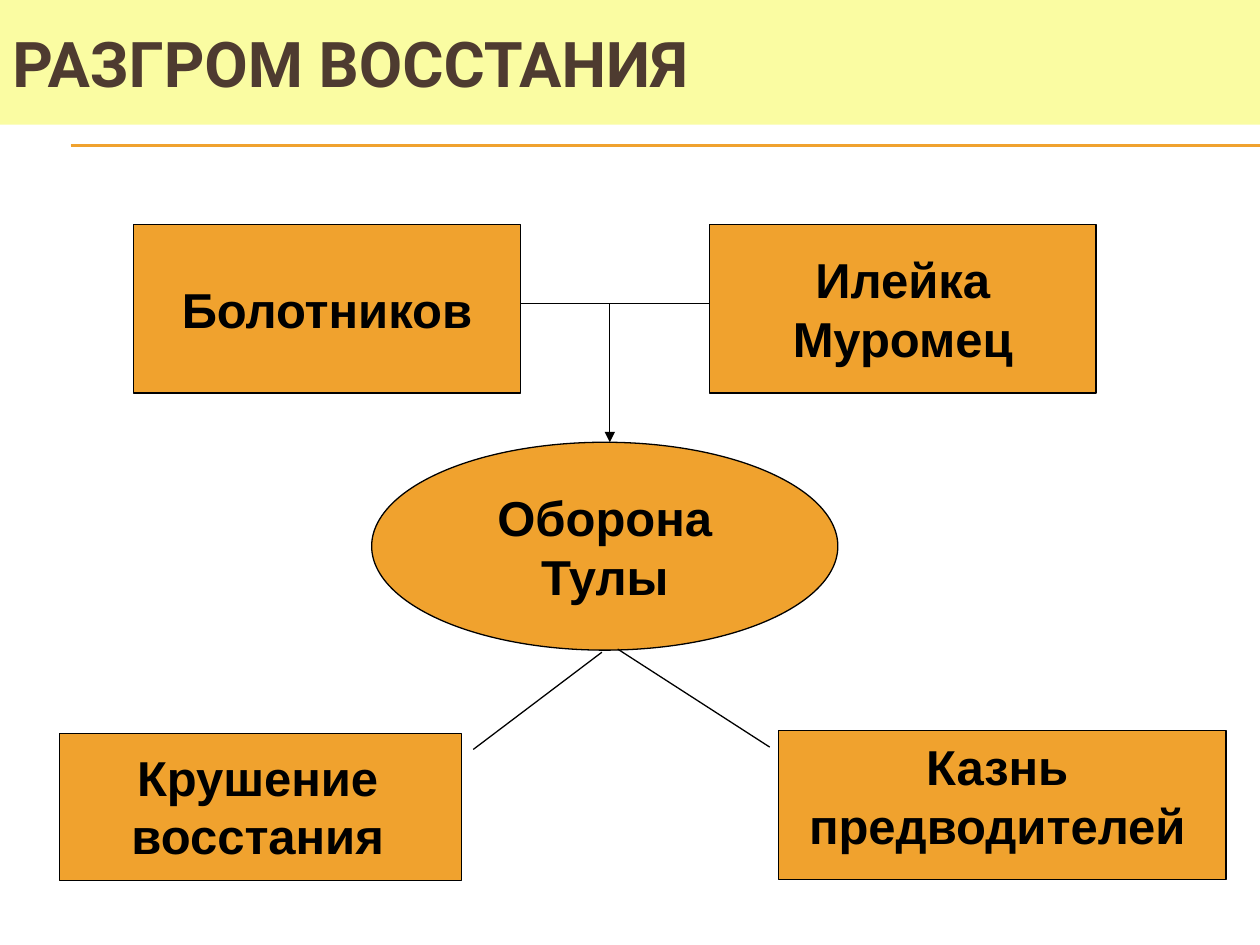
from collections import namedtuple

from lxml import etree
from pptx import Presentation
from pptx import util as u
from pptx.dml.color import RGBColor
from pptx.enum import shapes, text
from pptx.oxml.ns import qn

COLOURS = {"banner": "FAFCA2", "title": "4E3B30", "accent": "F0A22E", "ink": "000000"}
KINDS = shapes.MSO_SHAPE

Box = namedtuple("Box", "left top width height")


def colour(name):
    return RGBColor.from_string(COLOURS[name])


def inside(box, left, top, width, height):
    """Place a part relative to the top left corner of its region."""
    return Box(box.left + left, box.top + top, width, height)


def inches(box):
    return [u.Inches(length) for length in box]


def write(shape, words, size, font, ink, align, wrap):
    frame = shape.text_frame
    frame.word_wrap = wrap
    frame.text = words
    for para in frame.paragraphs:
        para.alignment = align
        para.font.size = u.Pt(size)
        para.font.name = font
        para.font.bold = True
        para.font.color.rgb = colour(ink)


def label(shape, words, wrap=False):
    write(shape, words, 28, "Arial", "ink", text.PP_ALIGN.CENTER, wrap)


def add_block(page, kind, box, fill="accent", outline="ink"):
    shape = page.shapes.add_shape(kind, *inches(box))
    shape.shadow.inherit = False
    shape.fill.solid()
    shape.fill.fore_color.rgb = colour(fill)
    if outline:
        shape.line.color.rgb = colour(outline)
        shape.line.width = u.Pt(0.75)
    else:
        shape.line.fill.background()
    shape.text_frame.vertical_anchor = text.MSO_ANCHOR.MIDDLE
    return shape


def add_line(page, box, ink="ink", arrow=False):
    left, top, width, height = inches(box)
    line = page.shapes.add_connector(
        shapes.MSO_CONNECTOR.STRAIGHT, left, top, left + width, top + height)
    line.line.color.rgb = colour(ink)
    line.line.width = u.Pt(0.75)
    if arrow:
        etree.SubElement(line.line._get_or_add_ln(), qn("a:tailEnd"), type="triangle")
    etree.SubElement(line._element.spPr, qn("a:effectLst"))


def add_header(page, box):
    for top in (1.15, 1.16):
        add_line(page, inside(box, 0.56, top, box.width - 0.56, 0), "accent")
    banner = add_block(page, KINDS.RECTANGLE, inside(box, 0, 0, box.width, 0.99),
                       "banner", None)
    write(banner, "РАЗГРОМ ВОССТАНИЯ", 36, "Roboto", "title", text.PP_ALIGN.LEFT, True)


def add_battle(page, box):
    """Two leaders, joined by a line that points down to the siege."""
    block_width, block_height, link_top = 3.07, 1.34, 0.63
    second_left = 4.57
    for left, name in ((0, "Болотников"), (second_left, "Илейка\nМуромец")):
        label(add_block(page, KINDS.RECTANGLE,
                        inside(box, left, 0, block_width, block_height)), name)
    siege = inside(box, 1.89, 1.73, 3.7, 1.65)
    add_line(page, inside(box, block_width, link_top, second_left - block_width, 0))
    add_line(page, inside(box, 3.78, link_top, 0, 1.73 - link_top), arrow=True)
    label(add_block(page, KINDS.OVAL, siege), "Оборона\vТулы")


def add_outcome(page, box, leader, words, words_box):
    """A callout whose leader runs up to the siege, with its caption."""
    callout = add_block(page, KINDS.LINE_CALLOUT_1, box)
    for index, value in enumerate(leader):
        callout.adjustments[index] = value
    caption = page.shapes.add_textbox(*inches(inside(box, *words_box)))
    label(caption, words, wrap=True)


def main():
    deck = Presentation()
    deck.slide_width, deck.slide_height = u.Inches(10), u.Inches(7.5)
    page = deck.slides.add_slide(deck.slide_layouts[6])
    add_header(page, Box(0, 0, 10, 1.16))
    add_battle(page, Box(1.06, 1.78, 7.64, 3.38))
    add_outcome(page, Box(0.47, 5.82, 3.19, 1.17), (0.11, 1.03, -0.55, 1.35),
                "Крушение\vвосстания", (0.04, 0.06, 3.07, 1.03))
    add_outcome(page, Box(6.18, 5.8, 3.55, 1.18), (0.11, -0.02, -0.55, -0.36),
                "Казнь предводителей", (0.08, 0, 3.31, 1.03))
    deck.save("out.pptx")


if __name__ == "__main__":
    main()
